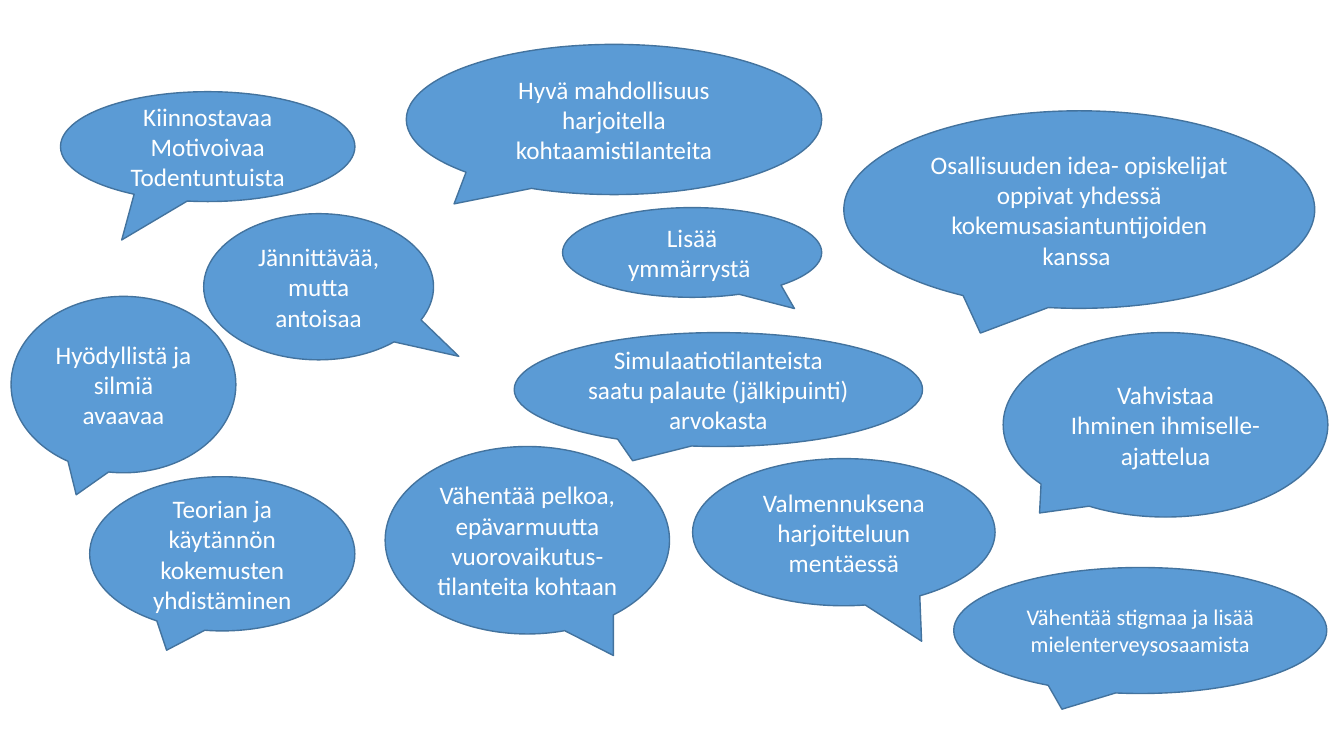
from dataclasses import dataclass

from pptx import Presentation
from pptx.dml.color import RGBColor
from pptx.enum.shapes import MSO_SHAPE
from pptx.enum.text import MSO_ANCHOR, PP_ALIGN
from pptx.util import Inches, Pt

BUBBLE = MSO_SHAPE.OVAL_CALLOUT
MIDDLE = MSO_ANCHOR.MIDDLE
CENTER = PP_ALIGN.CENTER
BLANK = 6


@dataclass(frozen=True)
class Theme:
    fill: RGBColor = RGBColor(0x5B, 0x9B, 0xD5)
    line: RGBColor = RGBColor(0x43, 0x73, 0x9E)
    text: RGBColor = RGBColor(0xFF, 0xFF, 0xFF)
    font: str = "Calibri"
    size: int = 18
    small: int = 16
    width: int = 1


THEME = Theme()
TAIL = (-0.21, 0.625)  # usual tail tip, as a share of the bubble's size

# Each bubble: box (left, top, width, height), paragraphs, own format
QUOTES = [
    ((2.02, 2.12, 2.28, 1.45), ["Jännittävää, mutta antoisaa"],
     {"tail": (0.61, 0.476)}),
    ((5.58, 2.06, 2.57, 0.89), ["Lisää ymmärrystä "],
     {"tail": (0.395, 0.625)}),
    ((0.89, 4.73, 2.63, 1.53),
     ["Teorian ja käytännön kokemusten yhdistäminen"], {}),
    ((4.03, 0.44, 4.12, 1.49),
     ["Hyvä mahdollisuus harjoitella kohtaamistilanteita"],
     {"tail": (-0.385, 0.562)}),
    ((5.1, 3.3, 4.05, 1.13),
     ["Simulaatiotilanteista saatu palaute (jälkipuinti) arvokasta"], {}),
    ((8.37, 1.1, 4.67, 1.96),
     ["Osallisuuden idea- opiskelijat oppivat yhdessä "
      "kokemusasiantuntijoiden kanssa "], {}),
    ((0.6, 0.91, 2.92, 1.09),
     ["Kiinnostavaa", "Motivoivaa", "Todentuntuista"],
     {"tail": (-0.292, 0.849)}),
    ((3.82, 4.43, 2.82, 1.86),
     ["Vähentää pelkoa, epävarmuutta vuorovaikutus-tilanteita kohtaan "],
     {"tail": (0.303, 0.615)}),
    ((6.87, 4.55, 3, 1.46), ["Valmennuksena harjoitteluun mentäessä"],
     {"tail": (0.257, 0.741)}),
    ((9.46, 5.63, 3.7, 1.25),
     ["Vähentää stigmaa ja lisää mielenterveysosaamista"],
     {"size": THEME.small}),
    ((0.11, 2.94, 2.23, 1.75), ["Hyödyllistä ja silmiä avaavaa"], {}),
    ((9.95, 3.3, 3.22, 1.83), ["Vahvistaa", "Ihminen ihmiselle- ajattelua"],
     {"tail": (-0.388, 0.478)}),
]


def write(frame, lines, size=THEME.size, color=THEME.text, align=CENTER):
    """Fill a text frame with one paragraph per line."""
    frame.word_wrap = True
    frame.vertical_anchor = MIDDLE
    for i, line in enumerate(lines):
        para = frame.paragraphs[0] if i == 0 else frame.add_paragraph()
        para.alignment = align
        run = para.add_run()
        run.text = line
        run.font.name = THEME.font
        run.font.size = Pt(size)
        run.font.color.rgb = color


def add_bubble(slide, box, lines, tail=TAIL, size=THEME.size):
    """Draw one speech bubble in its box."""
    shape = slide.shapes.add_shape(BUBBLE, *map(Inches, box))
    shape.shadow.inherit = False
    shape.adjustments[0], shape.adjustments[1] = tail
    shape.fill.solid()
    shape.fill.fore_color.rgb = THEME.fill
    shape.line.color.rgb = THEME.line
    shape.line.width = Pt(THEME.width)
    write(shape.text_frame, lines, size=size)


def main():
    deck = Presentation()
    deck.slide_width = Inches(13.33)
    deck.slide_height = Inches(7.5)
    slide = deck.slides.add_slide(deck.slide_layouts[BLANK])

    # Feedback bubbles, from back to front
    for box, lines, style in QUOTES:
        add_bubble(slide, box, lines, **style)

    deck.save("out.pptx")


if __name__ == "__main__":
    main()
